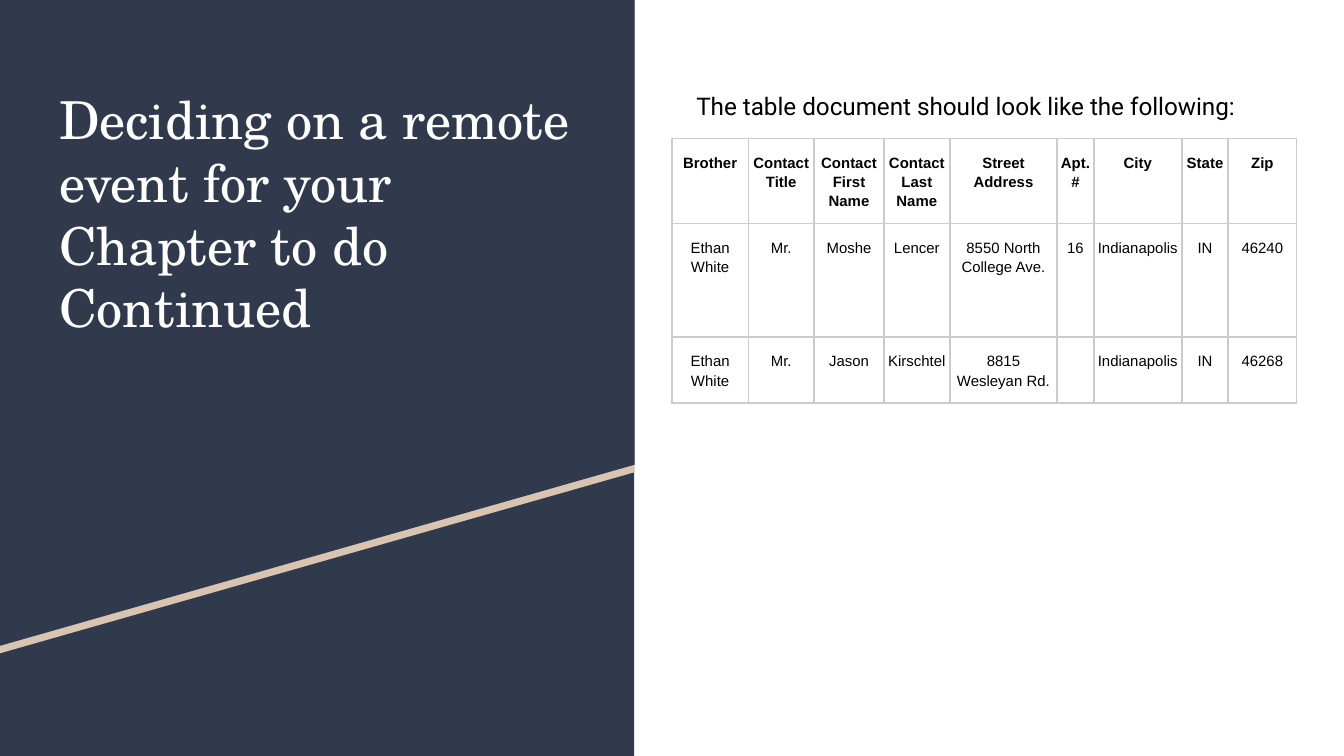
from lxml import etree
from pptx import Presentation
from pptx.dml.color import RGBColor
from pptx.enum.shapes import MSO_SHAPE
from pptx.enum.text import MSO_ANCHOR, MSO_AUTO_SIZE, PP_ALIGN
from pptx.oxml.ns import qn
from pptx.util import Pt

RECT = MSO_SHAPE.RECTANGLE
TOP = MSO_ANCHOR.TOP
NO_FIT = MSO_AUTO_SIZE.NONE
LEFT, CENTER = PP_ALIGN.LEFT, PP_ALIGN.CENTER

TITLE = ["Deciding on a remote event for your Chapter to do", "Continued"]
BODY = ["The table document should look like the following:"]
HEADER = ["Brother", "Contact Title", "Contact First Name", "Contact Last Name",
          "Street Address", "Apt. #", "City", "State", "Zip"]
CONTACTS = [
    ["Ethan White", "Mr.", "Moshe", "Lencer", "8550 North College Ave.", "16",
     "Indianapolis", "IN", "46240"],
    ["Ethan White", "Mr.", "Jason", "Kirschtel", "8815 Wesleyan Rd.", "",
     "Indianapolis", "IN", "46268"],
]
ROWS = [HEADER] + CONTACTS
FILLED_COLUMNS = {"Contact Last Name", "Zip"}

COLORS = {"navy": "31394D", "sand": "D9C4B1", "white": "FFFFFF",
          "black": "000000", "border": "CCCCCC"}
TITLE_FONT = {"name": "TeX Gyre Schola", "size": Pt(28), "bold": False}
BODY_FONT = {"name": "Roboto", "size": Pt(13), "bold": False}
CELL_FONT = {"name": "Arial", "size": Pt(8)}

SLIDE_W, SLIDE_H = 720, 405
PANEL_W = 339.8
WEDGE_LEFT_H, WEDGE_RIGHT_H = 346.3, 249.1
STRIPE = 3.6
TABLE_X, TABLE_Y = 360, 74.2
COL_WIDTHS = [40.9, 35.3, 37.4, 35.3, 57.5, 19.6, 47.3, 24.8, 36.6]
ROW_HEIGHTS = [45.5, 61, 35]


def rgb(name):
    return RGBColor.from_string(COLORS[name])


def style(font, values, color):
    for key, value in values.items():
        setattr(font, key, value)
    font.color.rgb = rgb(color)


def paint(shape, color):
    shape.fill.solid()
    shape.fill.fore_color.rgb = rgb(color)
    shape.line.fill.background()
    shape.shadow.inherit = False


def add_wedge(s, drop, color):
    """Draw the slanted panel with its lower edge moved down by drop."""
    fb = s.shapes.build_freeform(0, 0, scale=Pt(1))
    fb.add_line_segments([(PANEL_W, 0), (PANEL_W, WEDGE_RIGHT_H + drop),
                          (0, WEDGE_LEFT_H + drop)])
    paint(fb.convert_to_shape(), color)


def fill_placeholder(s, sp, box, lines, font, color, spacing):
    sp.left, sp.top, sp.width, sp.height = map(Pt, box)
    tf = sp.text_frame
    tf.word_wrap, tf.auto_size, tf.vertical_anchor = True, NO_FIT, TOP
    for side in ("left", "top", "right", "bottom"):
        setattr(tf, f"margin_{side}", Pt(7.2))
    for i, line in enumerate(lines):
        p = tf.paragraphs[0] if i == 0 else tf.add_paragraph()
        pPr = p._p.get_or_add_pPr()
        pPr.set("marL", "0")
        pPr.set("indent", "0")
        etree.SubElement(pPr, qn("a:buNone"))
        p.alignment, p.line_spacing = LEFT, spacing
        p.space_before = p.space_after = Pt(0)
        r = p.add_run()
        r.text = line
        style(r.font, font, color)
    s.shapes._spTree.append(sp._element)  # bring in front of the panel


def add_borders(cell):
    tcPr = cell._tc.get_or_add_tcPr()
    for side in ("L", "R", "T", "B"):
        ln = etree.SubElement(tcPr, qn(f"a:ln{side}"), w=str(Pt(1)))
        fill = etree.SubElement(ln, qn("a:solidFill"))
        etree.SubElement(fill, qn("a:srgbClr"), val=COLORS["border"])


def fill_cell(cell, text, bold, filled):
    add_borders(cell)
    if filled:
        cell.fill.solid()
        cell.fill.fore_color.rgb = rgb("white")
    else:
        cell.fill.background()
    cell.margin_left = cell.margin_right = Pt(2)
    cell.margin_top = cell.margin_bottom = Pt(7.2)
    cell.vertical_anchor = TOP
    p = cell.text_frame.paragraphs[0]
    p.alignment, p.line_spacing = CENTER, 1.15
    if text:
        r = p.add_run()
        r.text = text
        style(r.font, {**CELL_FONT, "bold": bold}, "black")
    else:
        etree.SubElement(p._p, qn("a:endParaRPr"), sz="800")


def add_contacts(s):
    frame = s.shapes.add_table(len(ROWS), len(HEADER), Pt(TABLE_X), Pt(TABLE_Y),
                               Pt(sum(COL_WIDTHS)), Pt(sum(ROW_HEIGHTS)))
    table = frame.table
    table.first_row = table.horz_banding = False
    for column, width in zip(table.columns, COL_WIDTHS):
        column.width = Pt(width)
    for i, (row, height) in enumerate(zip(ROWS, ROW_HEIGHTS)):
        table.rows[i].height = Pt(height)
        for j, text in enumerate(row):
            filled = i > 0 and HEADER[j] in FILLED_COLUMNS
            fill_cell(table.cell(i, j), text, i == 0, filled)


def main():
    prs = Presentation()
    prs.slide_width, prs.slide_height = Pt(SLIDE_W), Pt(SLIDE_H)
    s = prs.slides.add_slide(prs.slide_layouts[1])
    panel = s.shapes.add_shape(RECT, 0, 0, Pt(PANEL_W), Pt(SLIDE_H))
    paint(panel, "navy")
    add_wedge(s, STRIPE, "sand")
    add_wedge(s, 0, "navy")
    fill_placeholder(s, s.shapes.title, (24.5, 39.6, 291.6, 197.3),
                     TITLE, TITLE_FONT, "white", 1.0)
    fill_placeholder(s, s.placeholders[1], (365.8, 39.6, 328.3, 322.6),
                     BODY, BODY_FONT, "black", 1.15)
    add_contacts(s)
    prs.save("out.pptx")


if __name__ == "__main__":
    main()
